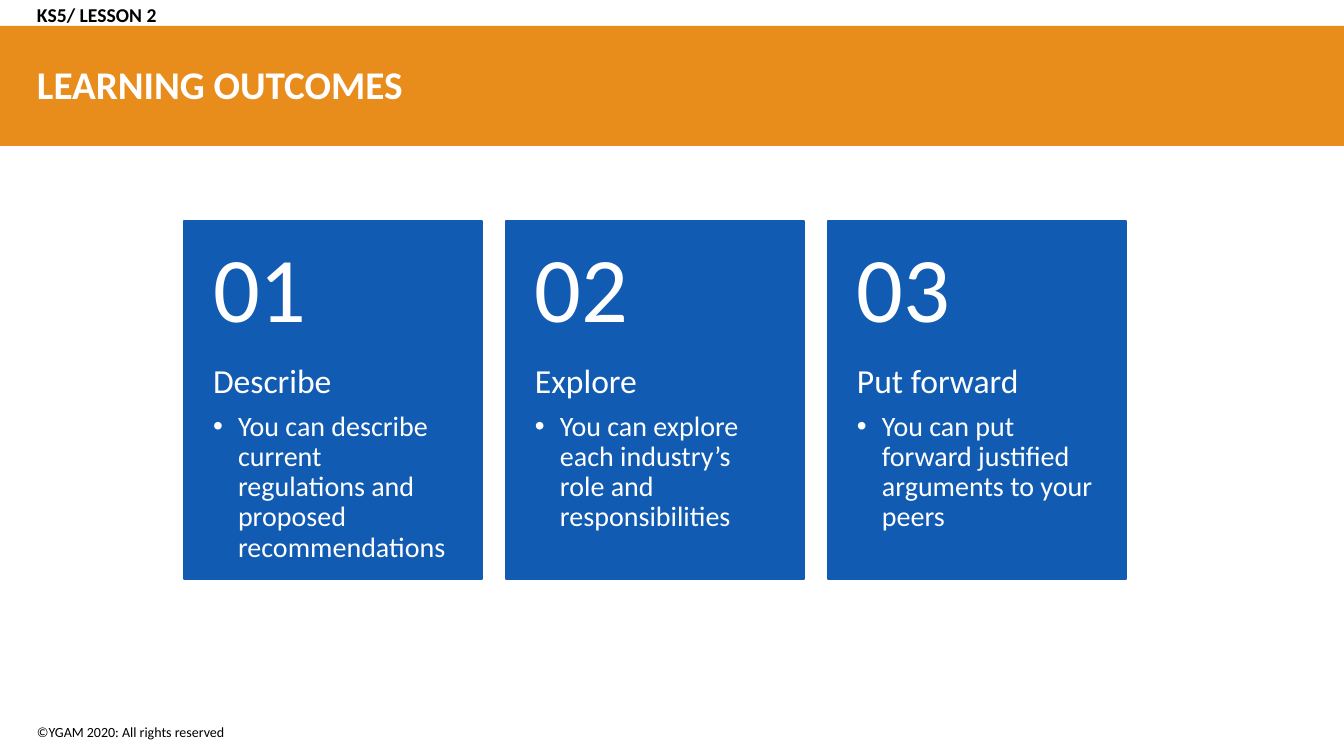
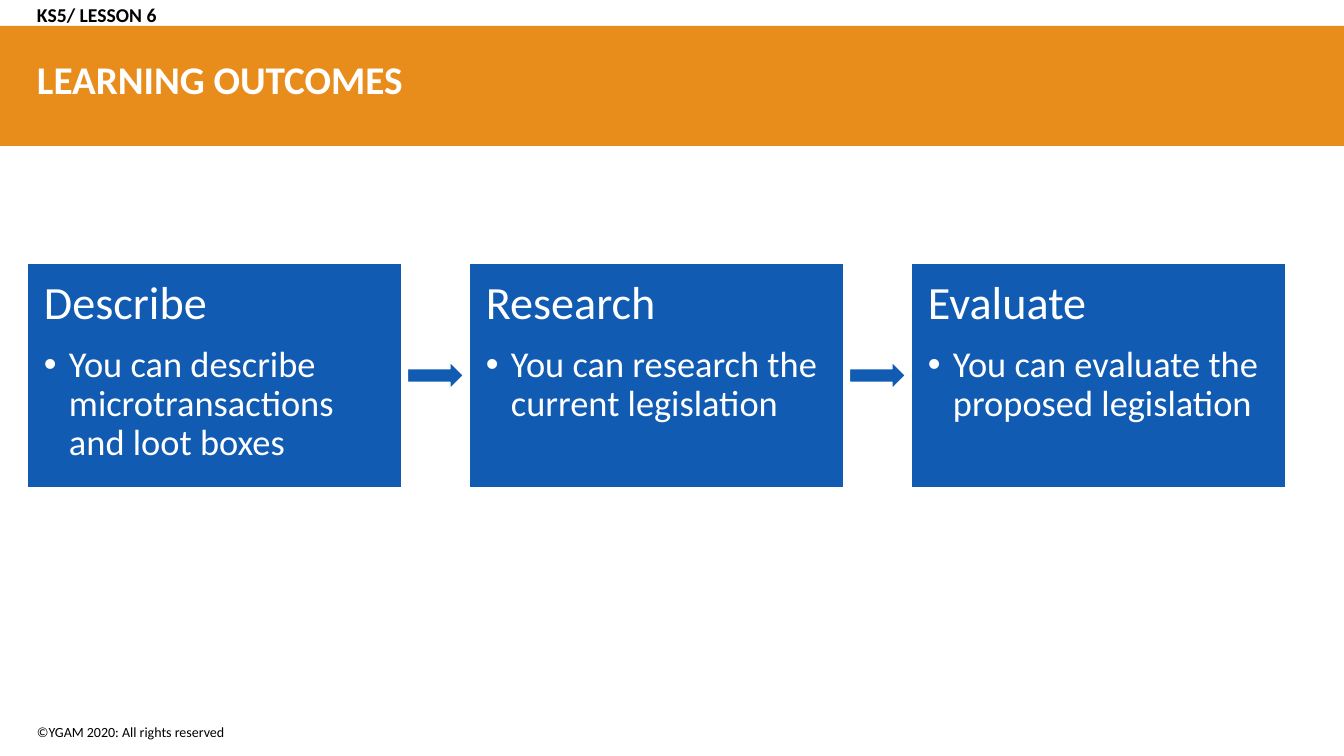
from lxml.etree import SubElement
from pptx import Presentation
from pptx.dml.color import RGBColor
from pptx.enum.shapes import MSO_SHAPE
from pptx.enum.text import MSO_ANCHOR, PP_ALIGN
from pptx.oxml.ns import qn
from pptx.util import Pt

# Content
TITLE = "LEARNING OUTCOMES"
FOOTER = "©YGAM 2020: All rights reserved"
NUMBERED_OUTCOMES = [
    ("Describe", "You can describe current regulations and proposed recommendations"),
    ("Explore", "You can explore each industry’s role and responsibilities"),
    ("Put forward", "You can put forward justified arguments to your peers"),
]
OUTCOME_STEPS = [
    ("Describe", "You can describe microtransactions and loot boxes"),
    ("Research", "You can research the current legislation"),
    ("Evaluate", "You can evaluate the proposed legislation"),
]

# Shared style, lengths in px
COLOURS = {"band": "E88C1C", "card": "115CB2", "light": "FFFFFF", "dark": "000000"}
FONT = "Calibri"
EMU_PER_PX = 914400 / 100.8
PAGE_WIDTH, PAGE_HEIGHT = 1344, 756
MARGIN = 27
BAND_TOP, BAND_HEIGHT = 26, 120
TEXT_INSETS = (10, 5, 10, 5)
BULLET_INDENT = 25


def px(length):
    return round(length * EMU_PER_PX)


def colour(name):
    return RGBColor.from_string(COLOURS[name])


def set_frame(shape, insets, anchor):
    frame = shape.text_frame
    frame.word_wrap = True
    frame.vertical_anchor = anchor
    frame.margin_left, frame.margin_top, frame.margin_right, frame.margin_bottom = map(px, insets)
    return frame


def style_paragraph(paragraph, text, size, text_colour, bold=False, after=0, spacing=0.9):
    paragraph.text = text
    paragraph.alignment = PP_ALIGN.LEFT
    paragraph.line_spacing = spacing
    paragraph.space_after = Pt(round(size * after, 2))
    for span in paragraph.runs:
        span.font.name = FONT
        span.font.size = Pt(size)
        span.font.bold = bold
        span.font.color.rgb = colour(text_colour)


def add_bullet(paragraph):
    properties = paragraph._p.get_or_add_pPr()
    properties.set("marL", str(px(BULLET_INDENT)))
    properties.set("indent", str(-px(BULLET_INDENT)))
    SubElement(properties, qn("a:buFont")).set("typeface", "Arial")
    SubElement(properties, qn("a:buChar")).set("char", "•")


def add_text(page, area, text, size, text_colour, insets=TEXT_INSETS,
             anchor=MSO_ANCHOR.MIDDLE, **style):
    box = page.shapes.add_textbox(*map(px, area))
    frame = set_frame(box, insets, anchor)
    style_paragraph(frame.paragraphs[0], text, size, text_colour, **style)


def add_block(page, kind, area, fill, line=None):
    block = page.shapes.add_shape(kind, *map(px, area))
    block.shadow.inherit = False
    block.fill.solid()
    block.fill.fore_color.rgb = colour(fill)
    if line:
        block.line.color.rgb = colour(line)
        block.line.width = Pt(1)
    else:
        block.line.fill.background()
    return block


def add_card(page, area, line, insets, heading, detail, heading_size, detail_size):
    card = add_block(page, MSO_SHAPE.RECTANGLE, area, "card", line)
    frame = set_frame(card, insets, MSO_ANCHOR.TOP)
    style_paragraph(frame.paragraphs[0], heading, heading_size, "light", after=0.35)
    bullet = frame.add_paragraph()
    add_bullet(bullet)
    style_paragraph(bullet, detail, detail_size, "light", after=0.15)


def add_page(deck, lesson, title_top):
    page = deck.slides.add_slide(deck.slide_layouts[6])
    add_block(page, MSO_SHAPE.RECTANGLE, (0, BAND_TOP, PAGE_WIDTH, BAND_HEIGHT), "band")
    add_text(page, (MARGIN, 719, 568, 27), FOOTER, 10, "dark",
             anchor=MSO_ANCHOR.TOP, spacing=1.0)
    add_text(page, (MARGIN, title_top, 1286, BAND_HEIGHT), TITLE, 28, "light", bold=True)
    add_text(page, (MARGIN, -6, 590, 44), lesson, 14, "dark", bold=True)
    return page


def add_numbered_cards(page):
    left, top, width, height, gap = 184, 221, 298, 358, 24
    number_height, side = 143, 29
    for index, (heading, detail) in enumerate(NUMBERED_OUTCOMES):
        x = left + index * (width + gap)
        add_card(page, (x, top, width, height), "card", (side, number_height, side, 36),
                 heading, detail, 24, 20)
        add_text(page, (x, top, width, number_height), f"{index + 1:02d}", 66, "light",
                 insets=(side, 18, side, 18), after=0.35)


def add_step_cards(page):
    top, width, height, gap = 263, 375, 225, 67
    arrow_width, arrow_height = 56, 27
    for index, (heading, detail) in enumerate(OUTCOME_STEPS):
        x = MARGIN + index * (width + gap)
        add_card(page, (x, top, width, height), "light", (17, 17, 17, 17),
                 heading, detail, 33, 26)
        # Arrow centred in the gap before each later card
        if index:
            arrow_area = (x - (gap + arrow_width) / 2, top + (height - arrow_height) / 2,
                          arrow_width, arrow_height)
            add_block(page, MSO_SHAPE.RIGHT_ARROW, arrow_area, "card", "light")


def main():
    deck = Presentation()
    deck.slide_width, deck.slide_height = px(PAGE_WIDTH), px(PAGE_HEIGHT)
    add_numbered_cards(add_page(deck, "KS5/ LESSON 2", 27))
    add_step_cards(add_page(deck, "KS5/ LESSON 6", 22))
    deck.save("out.pptx")


if __name__ == "__main__":
    main()
